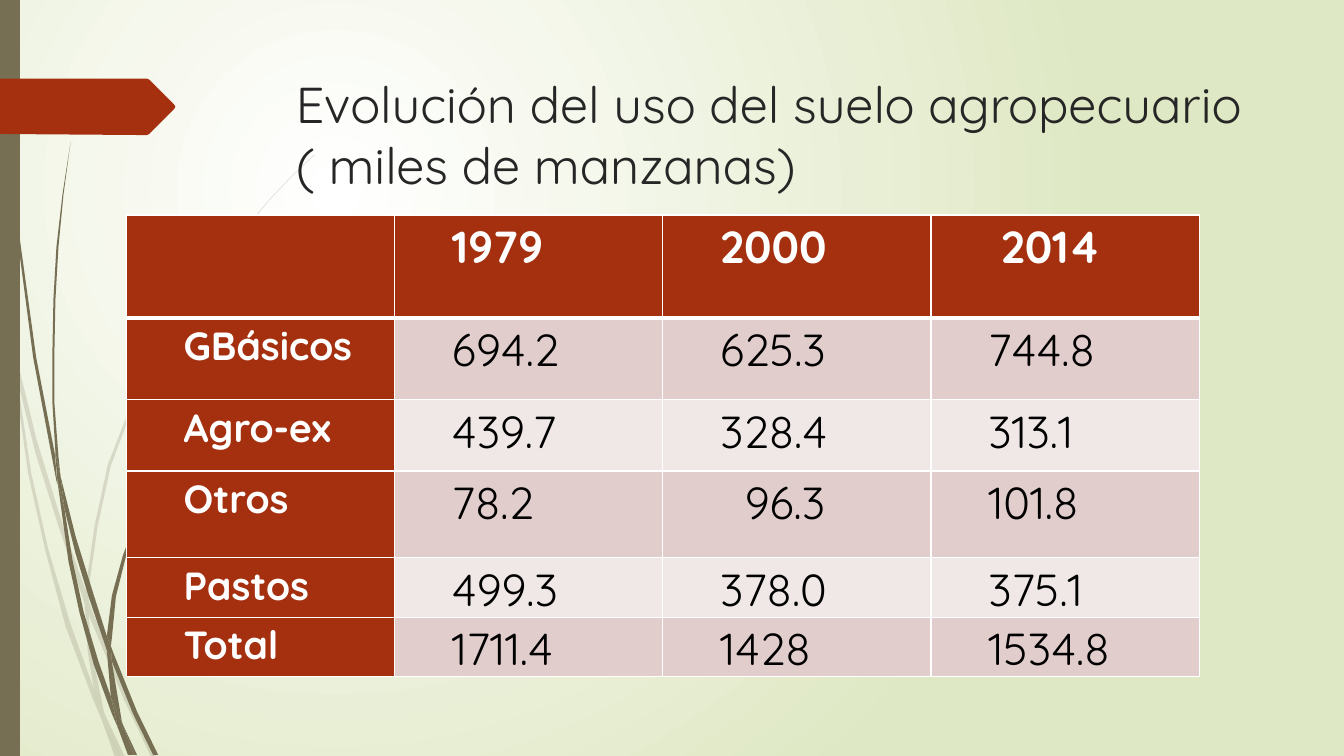
from dataclasses import dataclass

from lxml import etree
from pptx import Presentation
from pptx.dml.color import RGBColor
from pptx.enum.shapes import MSO_SHAPE
from pptx.enum.text import MSO_ANCHOR
from pptx.oxml.ns import qn
from pptx.util import Cm, Pt

RECTANGLE = MSO_SHAPE.RECTANGLE
TOP = MSO_ANCHOR.TOP


@dataclass(frozen=True)
class Theme:
    font: str = "Quicksand"
    title_size: int = 36
    value_size: int = 32
    label_size: int = 28
    title: str = "262626"
    value: str = "000000"
    white: str = "FFFFFF"
    red: str = "A53010"
    stem: str = "766F54"
    backdrop: str = "DFE8C4"
    bands: tuple = ("E1CDCC", "F0E8E7")


@dataclass(frozen=True)
class Box:
    left: int
    top: int
    width: int
    height: int


THEME = Theme()
OUTLINE_UNIT = Cm(2.54) / 100  # outlines are drawn on a grid of 100 steps per inch

PALE_GRASS = [
    [(11, 350), (9, 322), (0, 282), (0, 299), (10, 344)],
    [(58, 522), (84, 599), (85, 586), (62, 520), (36, 435), (14, 345), (17, 376), (35, 449)],
    [(92, 607), (88, 596), (88, 610), (123, 694), (150, 751), (155, 751), (127, 692)],
    [(119, 751), (124, 751), (105, 711)],
    [(93, 683), (70, 619), (48, 545), (31, 469), (17, 376), (11, 350), (28, 470), (45, 546),
     (65, 621), (92, 693), (101, 714), (99, 707)],
    [(84, 599), (87, 646), (93, 683), (96, 692), (105, 711), (103, 706), (91, 646), (88, 610),
     (88, 608)],
    [(88, 584), (97, 522), (110, 462), (132, 404), (160, 349), (193, 295), (229, 245),
     (268, 198), (290, 175), (312, 154), (312, 153), (289, 175), (268, 197), (228, 244),
     (191, 294), (158, 348), (130, 402), (107, 461), (94, 521), (85, 584), (85, 586), (88, 596)],
    [(101, 714), (114, 751), (119, 751)],
    [(88, 608), (88, 610), (88, 596), (85, 586), (84, 599)],
    [(96, 692), (93, 683), (99, 707), (101, 714), (119, 751), (105, 711)],
]
DARK_GRASS = [
    [(7, 110), (17, 233), (33, 355), (56, 477), (57, 481), (55, 457), (55, 453), (36, 355),
     (19, 232), (8, 109), (5, 48), (4, 0), (3, 0), (4, 48)],
    [(88, 592), (106, 645), (106, 633), (106, 631), (93, 590), (75, 532), (60, 472), (64, 505),
     (75, 549)],
    [(113, 649), (110, 641), (111, 656), (132, 708), (152, 749), (157, 749), (136, 706)],
    [(110, 691), (98, 657), (83, 607), (72, 556), (64, 505), (57, 477), (68, 557), (79, 608),
     (93, 659), (111, 708), (117, 722), (116, 717)],
    [(60, 472), (58, 453), (54, 400), (54, 349), (55, 297), (58, 245), (63, 193), (70, 141),
     (62, 193), (56, 245), (53, 297), (52, 349), (52, 400), (55, 449)],
    [(133, 749), (136, 749), (122, 719)],
    [(57, 477), (64, 505), (60, 472), (55, 449), (55, 453)],
    [(111, 633), (115, 592), (125, 552), (139, 513), (158, 476), (180, 440), (205, 406),
     (231, 374), (245, 359), (261, 344), (260, 344), (245, 358), (231, 373), (204, 405),
     (178, 439), (156, 474), (137, 511), (122, 551), (111, 591), (106, 631), (110, 641)],
    [(117, 722), (127, 749), (131, 749)],
    [(106, 645), (110, 691), (116, 706), (122, 719), (121, 716), (111, 656), (109, 651)],
    [(106, 645), (109, 651), (111, 656), (110, 641), (106, 631), (106, 633)],
    [(116, 706), (110, 691), (116, 717), (117, 722), (130, 749), (133, 749), (122, 719)],
]
ARROW_TAG = [(173, 108), (148, 133), (146, 134), (136, 134), (0, 133), (0, 78), (146, 78),
             (148, 79), (173, 104), (174, 106)]

LAND_USE = [
    ["", "1979", "2000", "2014"],
    ["GBásicos", "694.2", "625.3", "744.8"],
    ["Agro-ex", "439.7", "328.4", "313.1"],
    ["Otros", "78.2", "96.3", "101.8"],
    ["Pastos", "499.3", "378.0", "375.1"],
    ["Total", "1711.4", "1428", "1534.8"],
]
ROW_HEIGHTS = [2.59, 2.06, 1.8, 2.18, 1.5, 1.5]
CELL_INDENT = 1.27
EXTRA_INDENTS = {"2014": 0.31, "96.3": 0.62}


def write_text(frame, text, *, size, color, bold=False, indent=0.0, spacing=None):
    paragraph = frame.paragraphs[0]
    run = paragraph.add_run()
    run.text = text
    run.font.name = THEME.font
    run.font.size = Pt(size)
    run.font.bold = bold
    run.font.color.rgb = RGBColor.from_string(color)
    if spacing:
        paragraph.line_spacing = spacing
    if indent:
        properties = paragraph._p.get_or_add_pPr()
        properties.set("marL", str(Cm(indent)))
        properties.set("indent", "0")


def paint(shape, color, opacity=100):
    shape.shadow.inherit = False
    shape.fill.solid()
    shape.fill.fore_color.rgb = RGBColor.from_string(color)
    shape.line.fill.background()
    if opacity < 100:
        fill_color = shape.element.find(".//" + qn("a:srgbClr"))
        etree.SubElement(fill_color, qn("a:alpha"), val=str(opacity * 1000))


def add_outlines(slide, box, outlines, color, opacity=100):
    for start, *others in outlines:
        builder = slide.shapes.build_freeform(*start, scale=OUTLINE_UNIT)
        builder.add_line_segments(others, close=True)
        paint(builder.convert_to_shape(box.left, box.top), color, opacity)


def set_background(slide):
    """Radial gradient centred a quarter of the way into the slide."""
    fill = slide.background.fill
    fill.gradient()
    for stop, color in zip(fill.gradient_stops, (THEME.white, THEME.backdrop)):
        stop.color.rgb = RGBColor.from_string(color)
    gradient = slide.element.find(".//" + qn("a:gradFill"))
    gradient.remove(gradient.find(qn("a:lin")))
    path = etree.SubElement(gradient, qn("a:path"), path="circle")
    etree.SubElement(path, qn("a:fillToRect"), l="50000", t="50000", r="100000", b="100000")


def add_decoration(slide, box):
    add_outlines(slide, box, PALE_GRASS, THEME.stem, opacity=20)
    add_outlines(slide, box, DARK_GRASS, THEME.stem)
    side_bar = slide.shapes.add_shape(RECTANGLE, box.left, box.top, Cm(0.5), box.height)
    paint(side_bar, THEME.stem)
    add_outlines(slide, box, [ARROW_TAG], THEME.red)


def add_title(slide, box):
    text_box = slide.shapes.add_textbox(box.left, box.top, box.width, box.height)
    frame = text_box.text_frame
    frame.word_wrap = True
    frame.vertical_anchor = TOP
    write_text(frame, "Evolución del uso del suelo agropecuario ( miles de manzanas)",
               size=THEME.title_size, color=THEME.title)


def set_borders(cell, bottom_width):
    properties = cell._tc.get_or_add_tcPr()
    widths = {"a:lnL": 1, "a:lnR": 1, "a:lnT": 1, "a:lnB": bottom_width}
    for position, (side, width) in enumerate(widths.items()):
        line = etree.Element(qn(side), w=str(Pt(width)))
        fill = etree.SubElement(line, qn("a:solidFill"))
        etree.SubElement(fill, qn("a:srgbClr"), val=THEME.white)
        properties.insert(position, line)


def fill_cell(cell, text, row, column):
    is_header = row == 0
    is_heading = is_header or column == 0
    color = THEME.red if is_heading else THEME.bands[(row - 1) % 2]
    cell.fill.solid()
    cell.fill.fore_color.rgb = RGBColor.from_string(color)
    cell.margin_left = cell.margin_right = Cm(0.18)
    cell.margin_top = cell.margin_bottom = 0
    set_borders(cell, bottom_width=3 if is_header else 1)
    if text:
        write_text(cell.text_frame, text, bold=is_heading, spacing=1.07,
                   size=THEME.label_size if column == 0 else THEME.value_size,
                   color=THEME.white if is_heading else THEME.value,
                   indent=CELL_INDENT + EXTRA_INDENTS.get(text, 0))


def add_land_use_table(slide, box):
    row_count, column_count = len(LAND_USE), len(LAND_USE[0])
    table = slide.shapes.add_table(row_count, column_count, box.left, box.top,
                                   box.width, box.height).table
    for row, height in zip(table.rows, ROW_HEIGHTS):
        row.height = Cm(height)
    for row, texts in enumerate(LAND_USE):
        for column, text in enumerate(texts):
            fill_cell(table.cell(row, column), text, row, column)


def main():
    presentation = Presentation()
    presentation.slide_width = Cm(33.87)
    presentation.slide_height = Cm(19.05)
    slide = presentation.slides.add_slide(presentation.slide_layouts[6])
    set_background(slide)
    add_decoration(slide, Box(0, 0, presentation.slide_width, presentation.slide_height))
    add_title(slide, Box(Cm(7.21), Cm(1.73), Cm(24.77), Cm(3.56)))
    add_land_use_table(slide, Box(Cm(3.18), Cm(5.42), Cm(27.04), Cm(sum(ROW_HEIGHTS))))
    presentation.save("out.pptx")


if __name__ == "__main__":
    main()
